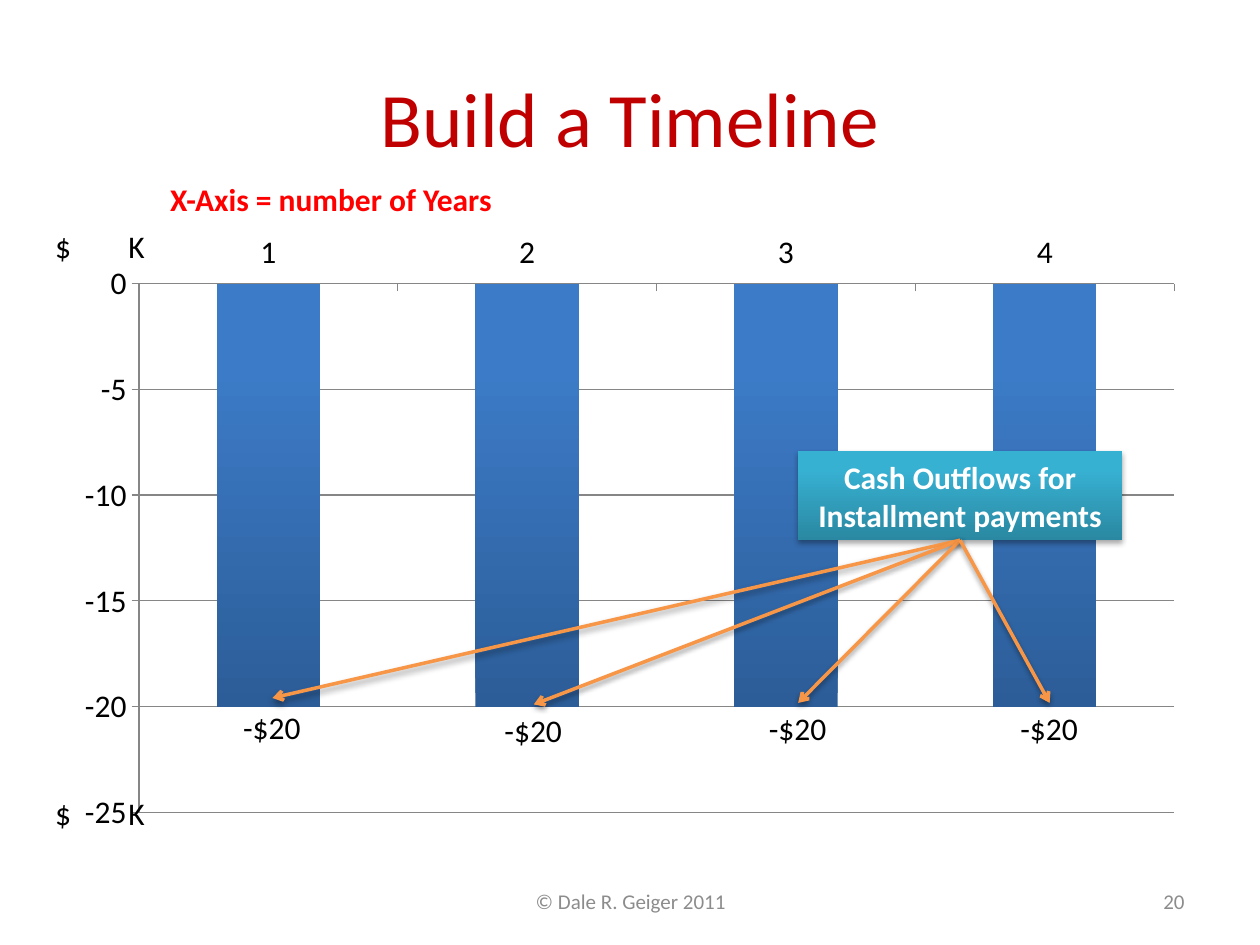
from lxml import etree
from pptx import Presentation
from pptx.chart.data import CategoryChartData
from pptx.dml.color import RGBColor
from pptx.enum.chart import XL_CHART_TYPE, XL_TICK_LABEL_POSITION, XL_TICK_MARK
from pptx.enum.shapes import MSO_CONNECTOR, MSO_SHAPE
from pptx.enum.text import MSO_ANCHOR, PP_ALIGN
from pptx.oxml import parse_xml
from pptx.oxml.ns import qn
from pptx.util import Cm, Pt

COLUMNS = XL_CHART_TYPE.COLUMN_CLUSTERED
LABELS_HIGH = XL_TICK_LABEL_POSITION.HIGH
TICK_OUT = XL_TICK_MARK.OUTSIDE
STRAIGHT = MSO_CONNECTOR.STRAIGHT
RECTANGLE = MSO_SHAPE.RECTANGLE
TOP, MIDDLE = MSO_ANCHOR.TOP, MSO_ANCHOR.MIDDLE
LEFT, CENTER, RIGHT = PP_ALIGN.LEFT, PP_ALIGN.CENTER, PP_ALIGN.RIGHT

# Content
FONT = "Calibri"
COLORS = {
    "title": "C00000", "note": "FF0000", "text": "000000", "footer": "8C8C8C",
    "white": "FFFFFF", "axis": "868686", "arrow": "F79646",
    "bar_bottom": "2C5D98", "bar_top": "3C7BC7",
    "callout_bottom": "2A88A2", "callout_top": "37B1D2",
}
YEARS = ["1", "2", "3", "4"]
CASH_FLOWS = [-20, -20, -20, -20]
CALLOUT = "Cash Outflows for Installment payments"

# Places in centimetres: left, top, width, height
CHART_BOX = (1.27, 4.45, 22.86, 12.57)
CALLOUT_BOX = (16.08, 9.09, 6.55, 1.8)
PLOT_LAYOUT = {"x": 0.067, "y": 0.101, "w": 0.913, "h": 0.848}
UNIT_COLUMNS = [("$", 0.86), ("K", 2.34)]
UNIT_ROWS = [4.45, 15.89]
LABEL_WIDTH, LINE_HEIGHT = 1.68, 1.02
# For each payment: centre of its label, arrow tip, top of its label
PAYMENTS = [(5.49, 14.07, 14.15), (10.76, 14.2, 14.2),
            (16.09, 14.17, 14.17), (21.16, 14.17, 14.17)]


def color(name):
    return RGBColor.from_string(COLORS[name])


def write(shape, text, size=18, ink="text", bold=False, align=LEFT,
          anchor=TOP, wrap=True):
    frame = shape.text_frame
    frame.word_wrap = wrap
    frame.vertical_anchor = anchor
    paragraph = frame.paragraphs[0]
    paragraph.alignment = align
    run = paragraph.add_run()
    run.text = text
    run.font.name, run.font.size, run.font.bold = FONT, Pt(size), bold
    run.font.color.rgb = color(ink)


def add_text(slide, box, text, **text_format):
    write(slide.shapes.add_textbox(*map(Cm, box)), text, **text_format)


def fill_gradient(fill, bottom, top):
    fill.gradient()
    fill.gradient_angle = 90
    for stop, name, position in zip(fill.gradient_stops, (bottom, top), (0, 0.8)):
        stop.color.rgb = color(name)
        stop.position = position


def add_shadow(shape, opacity):
    properties = shape._element.spPr
    for effects in properties.findall(qn("a:effectLst")):
        properties.remove(effects)
    properties.append(parse_xml(
        '<a:effectLst xmlns:a="http://schemas.openxmlformats.org/drawingml/2006/main">'
        '<a:outerShdw blurRad="40000" dist="22000" dir="5400000" rotWithShape="0">'
        f'<a:srgbClr val="000000"><a:alpha val="{opacity * 1000}"/></a:srgbClr>'
        '</a:outerShdw></a:effectLst>'))


def add_cash_chart(slide):
    data = CategoryChartData()
    data.categories = YEARS
    data.add_series("Series 1", CASH_FLOWS)
    chart = slide.shapes.add_chart(COLUMNS, *map(Cm, CHART_BOX), data).chart
    chart.has_legend = chart.has_title = False
    chart.font.name, chart.font.size = FONT, Pt(18)
    chart.font.color.rgb = color("text")

    plot = chart.plots[0]
    plot.gap_width = 150
    plot.vary_by_categories = False
    series = plot.series[0]
    series.invert_if_negative = False
    fill_gradient(series.format.fill, "bar_bottom", "bar_top")

    values, categories = chart.value_axis, chart.category_axis
    values.minimum_scale, values.maximum_scale, values.major_unit = -25, 0, 5
    values.has_major_gridlines = True
    categories.tick_label_position = LABELS_HIGH
    for axis in (values, categories):
        axis.major_tick_mark = TICK_OUT
    for part in (values, categories, values.major_gridlines):
        part.format.line.color.rgb = color("axis")
        part.format.line.width = Pt(0.75)

    # Fixed inner plot area
    plot_area = chart._chartSpace.chart.plotArea
    for old in plot_area.findall(qn("c:layout")):
        plot_area.remove(old)
    layout = etree.Element(qn("c:layout"))
    manual = etree.SubElement(layout, qn("c:manualLayout"))
    settings = {"layoutTarget": "inner", "xMode": "edge", "yMode": "edge", **PLOT_LAYOUT}
    for name, value in settings.items():
        etree.SubElement(manual, qn(f"c:{name}")).set("val", str(value))
    plot_area.insert(0, layout)


def add_arrow(slide, callout, x, y):
    arrow = slide.shapes.add_connector(STRAIGHT, 0, 0, Cm(x), Cm(y))
    arrow.begin_connect(callout, 2)
    arrow.line.color.rgb = color("arrow")
    arrow.line.width = Pt(2)
    etree.SubElement(arrow.line._get_or_add_ln(), qn("a:tailEnd")).set("type", "arrow")
    add_shadow(arrow, 38)


def main():
    presentation = Presentation()
    presentation.slide_width, presentation.slide_height = Cm(25.4), Cm(19.05)
    slide = presentation.slides.add_slide(presentation.slide_layouts[6])

    # Title, chart and axis notes
    add_text(slide, (1.27, 0.76, 22.86, 3.18), "Build a Timeline", size=44,
             ink="title", align=CENTER, anchor=MIDDLE)
    add_cash_chart(slide)
    for top in UNIT_ROWS:
        for unit, left in UNIT_COLUMNS:
            add_text(slide, (left, top, 0.84, LINE_HEIGHT), unit, wrap=False)
    add_text(slide, (3.18, 3.51, 7.09, LINE_HEIGHT), "X-Axis = number of Years",
             ink="note", bold=True, wrap=False)

    # Callout with an arrow to each payment
    callout = slide.shapes.add_shape(RECTANGLE, *map(Cm, CALLOUT_BOX))
    fill_gradient(callout.fill, "callout_bottom", "callout_top")
    callout.line.fill.background()
    add_shadow(callout, 35)
    write(callout, CALLOUT, ink="white", bold=True, align=CENTER, anchor=MIDDLE)
    for (center, tip, top), amount in zip(PAYMENTS, CASH_FLOWS):
        add_text(slide, (center - LABEL_WIDTH / 2, top, LABEL_WIDTH, LINE_HEIGHT),
                 f"-${-amount}", wrap=False)
        add_arrow(slide, callout, center, tip)

    # Footer
    add_text(slide, (8.69, 17.65, 8.05, LINE_HEIGHT), "© Dale R. Geiger 2011",
             size=12, ink="footer", align=CENTER, anchor=MIDDLE)
    add_text(slide, (18.21, 17.65, 5.92, LINE_HEIGHT), "20",
             size=12, ink="footer", align=RIGHT, anchor=MIDDLE)

    presentation.save("out.pptx")


if __name__ == "__main__":
    main()
